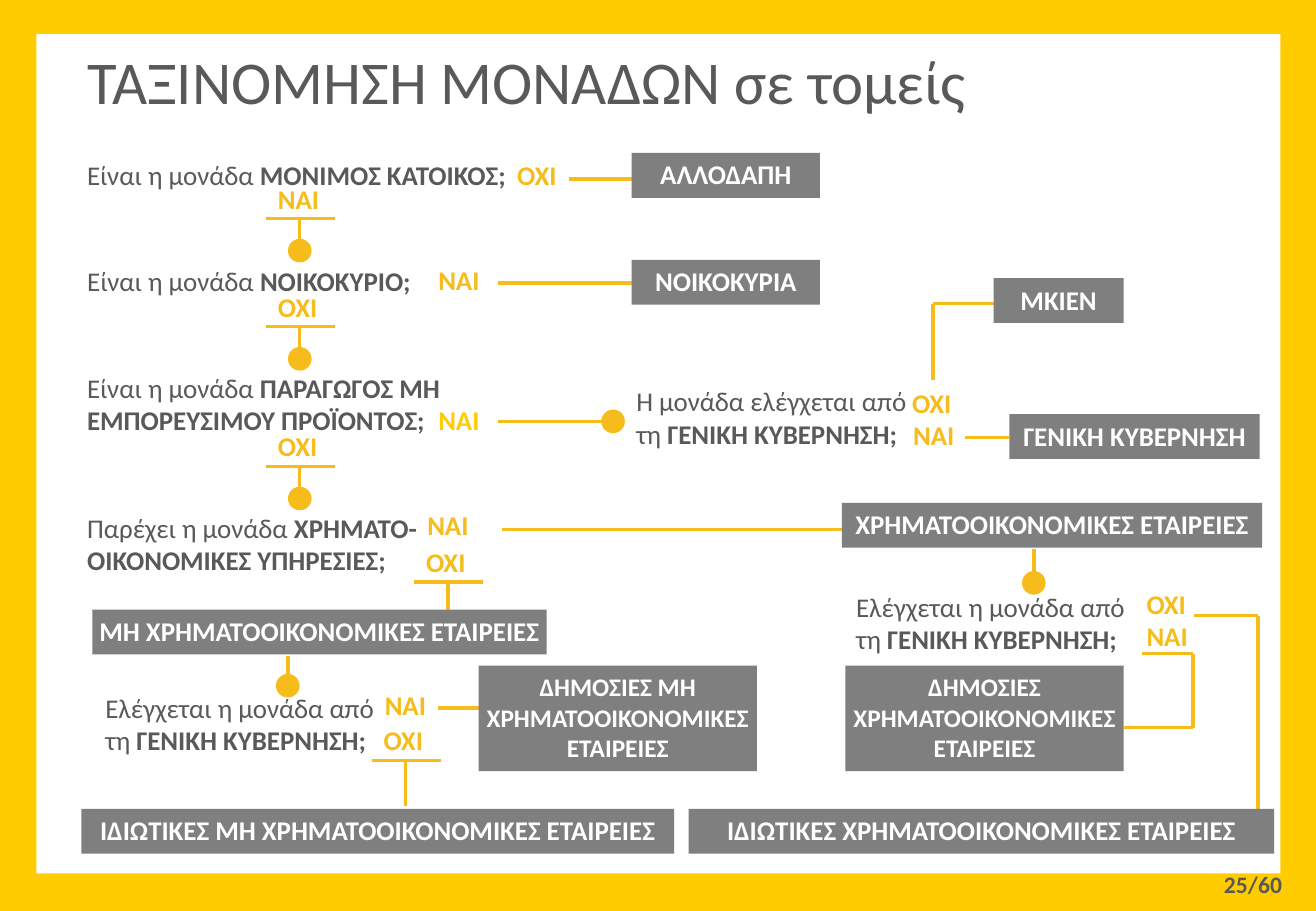
"""Build the decision-tree slide that sorts units into institutional sectors."""
from dataclasses import dataclass

from lxml.etree import SubElement
from pptx import Presentation
from pptx.dml.color import RGBColor
from pptx.enum.shapes import MSO_CONNECTOR, MSO_SHAPE
from pptx.enum.text import MSO_ANCHOR, PP_ALIGN
from pptx.oxml.ns import qn
from pptx.util import Pt

YES, NO = "ΝΑΙ", "ΟΧΙ"


@dataclass(frozen=True)
class Theme:
    font: str = "Calibri"
    frame: str = "FFCC00"
    paper: str = "FFFFFF"
    accent: str = "F6BC1C"
    sector: str = "7F7F7F"
    ink: str = "595959"
    title_size: float = 36
    text_size: float = 16
    small_size: float = 15
    page_size: float = 14
    line_width: float = 2
    dot_size: float = 14


@dataclass(frozen=True)
class Sector:
    left: float
    top: float
    width: float
    lines: tuple[str, ...]
    height: float = 26.6


@dataclass(frozen=True)
class Question:
    left: float
    top: float
    width: float
    lines: tuple[tuple[str, str], ...]


@dataclass(frozen=True)
class Answer:
    left: float
    top: float
    text: str
    color: str


@dataclass(frozen=True)
class Route:
    points: tuple[tuple[float, float], ...]
    dot: bool = False


@dataclass(frozen=True)
class Drop:
    left: float
    top: float
    answer: str
    stem: float = 19
    dot: bool = True


THEME = Theme()
CONTROL = "ΓΕΝΙΚΗ ΚΥΒΕΡΝΗΣΗ;"
CONTROLLED = (("Ελέγχεται η μονάδα από", ""), ("τη ", CONTROL))
CORPORATIONS = ("ΧΡΗΜΑΤΟΟΙΚΟΝΟΜΙΚΕΣ", "ΕΤΑΙΡΕΙΕΣ")

SECTORS = (
    Sector(374.4, 90.7, 111.6, ("ΑΛΛΟΔΑΠΗ",)),
    Sector(374.4, 154.1, 111.6, ("ΝΟΙΚΟΚΥΡΙΑ",)),
    Sector(589, 164.9, 77, ("ΜΚΙΕΝ",)),
    Sector(598.3, 245.5, 148.3, ("ΓΕΝΙΚΗ ΚΥΒΕΡΝΗΣΗ",)),
    Sector(499, 298.1, 249.1, ("ΧΡΗΜΑΤΟΟΙΚΟΝΟΜΙΚΕΣ ΕΤΑΙΡΕΙΕΣ",)),
    Sector(54.7, 361.4, 269.3, ("ΜΗ ΧΡΗΜΑΤΟΟΙΚΟΝΟΜΙΚΕΣ ΕΤΑΙΡΕΙΕΣ",)),
    Sector(283.7, 394.6, 164.9, ("ΔΗΜΟΣΙΕΣ ΜΗ",) + CORPORATIONS, 62.6),
    Sector(501.1, 394.6, 164.9, ("ΔΗΜΟΣΙΕΣ",) + CORPORATIONS, 62.6),
    Sector(48.2, 479.5, 351.4, ("ΙΔΙΩΤΙΚΕΣ ΜΗ ΧΡΗΜΑΤΟΟΙΚΟΝΟΜΙΚΕΣ ΕΤΑΙΡΕΙΕΣ",)),
    Sector(408.2, 479.5, 347, ("ΙΔΙΩΤΙΚΕΣ ΧΡΗΜΑΤΟΟΙΚΟΝΟΜΙΚΕΣ ΕΤΑΙΡΕΙΕΣ",)),
)
QUESTIONS = (
    Question(44.6, 90.7, 280, (("Είναι η μονάδα ", "ΜΟΝΙΜΟΣ ΚΑΤΟΙΚΟΣ;"),)),
    Question(44.6, 153.4, 240, (("Είναι η μονάδα ", "ΝΟΙΚΟΚΥΡΙΟ;"),)),
    Question(44.6, 216.7, 240.5,
             (("Είναι η μονάδα ", "ΠΑΡΑΓΩΓΟΣ ΜΗ ΕΜΠΟΡΕΥΣΙΜΟΥ ΠΡΟΪΟΝΤΟΣ;"),)),
    Question(44.6, 299.5, 282.2,
             (("Παρέχει η μονάδα ", "ΧΡΗΜΑΤΟ-ΟΙΚΟΝΟΜΙΚΕΣ ΥΠΗΡΕΣΙΕΣ;"),)),
    Question(370.1, 224.6, 180, (("Η μονάδα ελέγχεται από", ""), ("τη ", CONTROL))),
    Question(55.4, 406.1, 180, CONTROLLED),
    Question(500.4, 346.3, 180, CONTROLLED),
)
ANSWERS = (
    Answer(299.5, 90.7, NO, THEME.accent),
    Answer(252.7, 152.6, YES, THEME.accent),
    Answer(252.7, 235.4, YES, THEME.frame),
    Answer(533.5, 225.4, NO, THEME.accent),
    Answer(534.2, 244.8, YES, THEME.accent),
    Answer(246.2, 298.1, YES, THEME.accent),
    Answer(221, 404.6, YES, THEME.accent),
    Answer(672.5, 344.9, NO, THEME.accent),
    Answer(672.5, 363.6, "NAI", THEME.accent),
)
ROUTES = (
    Route(((337.5, 106), (374.4, 106))),
    Route(((295.2, 167.8), (374.4, 167.8))),
    Route(((295.2, 249.8), (363.4, 249.8)), dot=True),
    Route(((552.9, 225.4), (552.9, 180), (589, 180))),
    Route(((571.7, 259.2), (598.3, 259.2))),
    Route(((297.4, 313.9), (499, 313.9))),
    Route(((259.9, 419.8), (283.7, 419.8))),
    Route(((707.8, 365), (745.6, 365), (745.6, 479.5))),
    Route(((676.8, 387.4), (707, 387.4), (707, 431.3), (666, 431.3))),
    Route(((170.6, 388.8), (170.6, 406.5)), dot=True),
    Route(((612.8, 325.4), (612.8, 345.5)), dot=True),
)
DROPS = (
    Drop(157.7, 129.6, YES),
    Drop(157.7, 193.7, NO),
    Drop(157.7, 276.5, NO),
    Drop(245.5, 344.9, NO, 16.5, False),
    Drop(220.3, 450.7, NO, 27, False),
)


def add_panel(page, kind: MSO_SHAPE, left: float, top: float,
              width: float, height: float, color: str):
    """Add a flat filled shape."""
    panel = page.shapes.add_shape(kind, Pt(left), Pt(top), Pt(width), Pt(height))
    panel.shadow.inherit = False
    panel.fill.solid()
    panel.fill.fore_color.rgb = RGBColor.from_string(color)
    panel.line.fill.background()
    return panel


def write_lines(box, lines: tuple[tuple[str, str], ...], size: float, color: str,
                bold: bool = False, align: PP_ALIGN = PP_ALIGN.LEFT) -> None:
    """Write one paragraph per line, each a lead and a bold emphasis."""
    frame = box.text_frame
    frame.word_wrap = True
    for index, (lead, emphasis) in enumerate(lines):
        para = frame.add_paragraph() if index else frame.paragraphs[0]
        para.alignment = align
        para.add_run().text = lead
        para.font.name, para.font.size, para.font.bold = THEME.font, Pt(size), bold
        para.font.color.rgb = RGBColor.from_string(color)
        if emphasis:
            span = para.add_run()
            span.text = emphasis
            span.font.bold = True


def add_text(page, left: float, top: float, width: float, height: float,
             lines: tuple[tuple[str, str], ...], size: float, color: str,
             bold: bool = False, align: PP_ALIGN = PP_ALIGN.LEFT) -> None:
    """Add a text box."""
    box = page.shapes.add_textbox(Pt(left), Pt(top), Pt(width), Pt(height))
    write_lines(box, lines, size, color, bold, align)


def add_sector(page, sector: Sector) -> None:
    """Add a grey box that names a sector."""
    box = add_panel(page, MSO_SHAPE.RECTANGLE, sector.left, sector.top,
                    sector.width, sector.height, THEME.sector)
    frame = box.text_frame
    frame.margin_left = frame.margin_right = frame.margin_top = Pt(0)
    frame.margin_bottom = Pt(1.5)
    frame.vertical_anchor = MSO_ANCHOR.MIDDLE
    size = THEME.small_size if len(sector.lines) > 1 else THEME.text_size
    write_lines(box, tuple((line, "") for line in sector.lines), size,
                THEME.paper, True, PP_ALIGN.CENTER)


def add_answer(page, answer: Answer) -> None:
    """Add a yes or no label."""
    add_text(page, answer.left, answer.top, 42, 26.6, ((answer.text, ""),),
             THEME.text_size, answer.color, True)


def add_route(page, route: Route) -> None:
    """Join the points with straight lines and end in a dot if asked."""
    for start, end in zip(route.points, route.points[1:]):
        line = page.shapes.add_connector(
            MSO_CONNECTOR.STRAIGHT, *(Pt(value) for value in start + end))
        line.line.width = Pt(THEME.line_width)
        line.line.color.rgb = RGBColor.from_string(THEME.accent)
        SubElement(line._element.spPr, qn("a:effectLst"))
    if route.dot:
        left, top = (value - THEME.dot_size / 2 for value in route.points[-1])
        add_panel(page, MSO_SHAPE.OVAL, left, top, THEME.dot_size,
                  THEME.dot_size, THEME.accent)


def add_drop(page, drop: Drop) -> None:
    """Add an underlined answer with a stem leading down."""
    middle = drop.left + 20
    add_route(page, Route(((drop.left, drop.top), (drop.left + 41, drop.top))))
    add_route(page, Route(((middle, drop.top), (middle, drop.top + drop.stem)), drop.dot))
    add_answer(page, Answer(drop.left, drop.top - 25.2, drop.answer, THEME.accent))


def main() -> None:
    """Draw the slide and save the deck."""
    deck = Presentation()
    deck.slide_width, deck.slide_height = Pt(780), Pt(540)
    page = deck.slides.add_slide(deck.slide_layouts[6])
    add_panel(page, MSO_SHAPE.RECTANGLE, 0, 0, 780, 540, THEME.frame)
    add_panel(page, MSO_SHAPE.RECTANGLE, 21.6, 20.2, 737.3, 497.5, THEME.paper)
    add_text(page, 44.6, 22.3, 691, 51, (("ΤΑΞΙΝΟΜΗΣΗ ΜΟΝΑΔΩΝ σε τομείς", ""),),
             THEME.title_size, THEME.ink)
    for route in ROUTES:
        add_route(page, route)
    for drop in DROPS:
        add_drop(page, drop)
    for sector in SECTORS:
        add_sector(page, sector)
    for question in QUESTIONS:
        height = 26.6 if question.top < 200 else 46
        add_text(page, question.left, question.top, question.width, height,
                 question.lines, THEME.text_size, THEME.ink)
    for answer in ANSWERS:
        add_answer(page, answer)
    add_text(page, 707, 512, 60, 24.5, (("25/60", ""),), THEME.page_size,
             THEME.ink, True, PP_ALIGN.RIGHT)
    deck.save("out.pptx")


if __name__ == "__main__":
    main()
